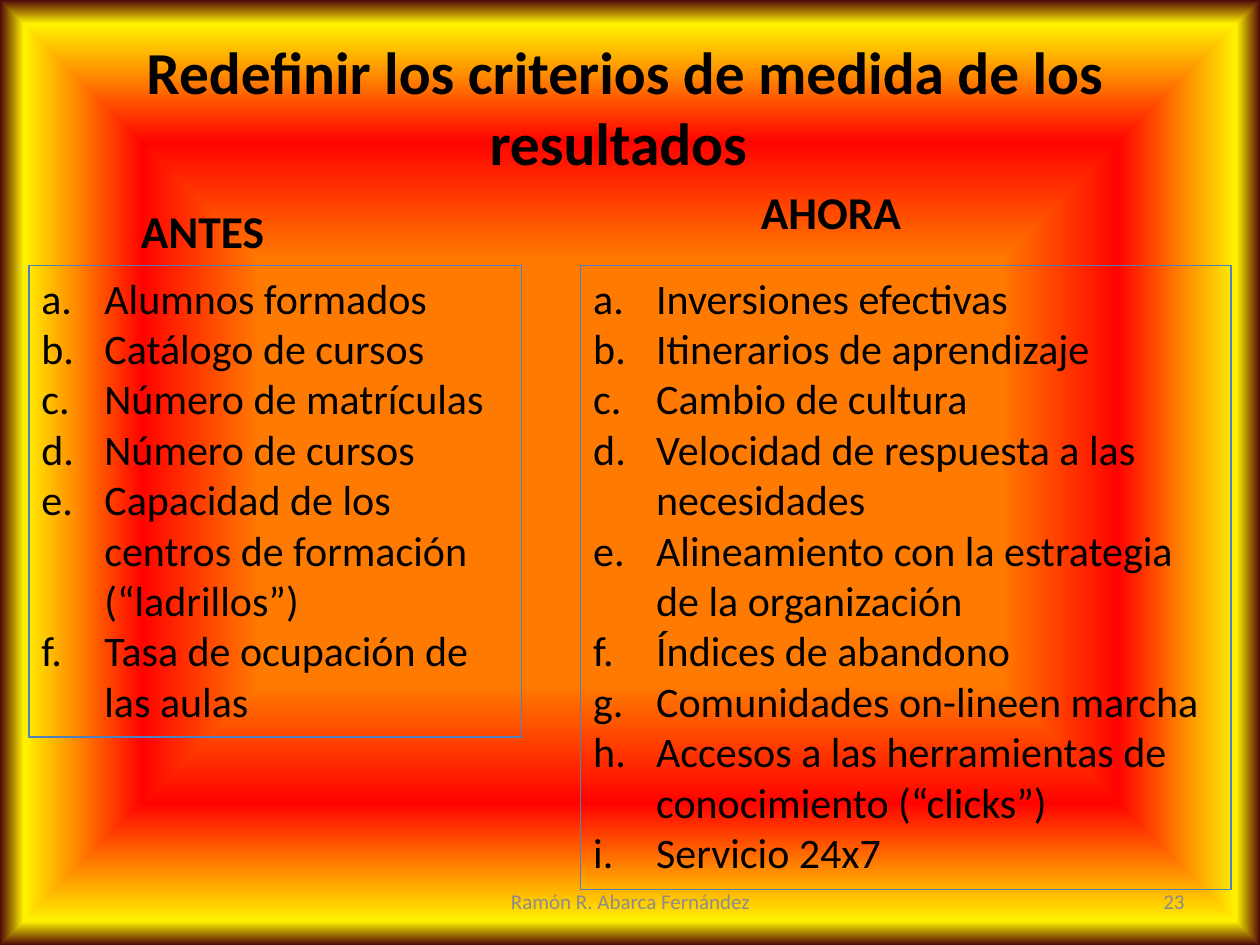
import pptx
import pptx.dml.color
import pptx.enum.shapes
import pptx.enum.text
import pptx.oxml
import pptx.oxml.ns
import pptx.util
from lxml import etree

Inches = pptx.util.Inches
RGBColor = pptx.dml.color.RGBColor
Align = pptx.enum.text.PP_ALIGN
Anchor = pptx.enum.text.MSO_ANCHOR
AutoSize = pptx.enum.text.MSO_AUTO_SIZE
qn = pptx.oxml.ns.qn

BLACK = RGBColor(0x00, 0x00, 0x00)
GRAY = RGBColor(0x8C, 0x8C, 0x8C)
BLUE = RGBColor(0x4F, 0x81, 0xBD)
ORANGE = RGBColor(0xFF, 0x7A, 0x00)
RED = RGBColor(0xFF, 0x03, 0x00)
YELLOW = RGBColor(0xFF, 0xF2, 0x00)
BROWN = RGBColor(0x4D, 0x08, 0x08)

BACKGROUND_STOPS = [(0, ORANGE), (45, ORANGE), (70, RED), (95, YELLOW), (100, BROWN)]
LIST_TOP = 2.11
BEFORE = [
    "Alumnos formados",
    "Catálogo de cursos",
    "Número de matrículas",
    "Número de cursos",
    "Capacidad de los centros de formación (“ladrillos”)",
    "Tasa de ocupación de las aulas",
]
NOW = [
    "Inversiones efectivas",
    "Itinerarios de aprendizaje",
    "Cambio de cultura",
    "Velocidad de respuesta a las necesidades",
    "Alineamiento con la estrategia de la organización",
    "Índices de abandono",
    "Comunidades on-lineen marcha",
    "Accesos a las herramientas de conocimiento (“clicks”)",
    "Servicio 24x7",
]


class SlideBuilder:
    font = "Calibri"

    def __init__(self, slide):
        self.slide = slide

    def background(self, stops):
        fill = self.slide.background.fill
        fill.gradient()
        grad = self.slide.element.find(".//" + qn("a:gradFill"))
        for child in list(grad):
            grad.remove(child)
        gs_list = etree.SubElement(grad, qn("a:gsLst"))
        for position, color in stops:
            gs = etree.SubElement(gs_list, qn("a:gs"), pos=str(position * 1000))
            etree.SubElement(gs, qn("a:srgbClr"), val=str(color))
        shade = etree.SubElement(grad, qn("a:path"), {"path": "rect"})
        center = dict.fromkeys("ltrb", "50000")
        etree.SubElement(shade, qn("a:fillToRect"), center)

    def format(self, p, text, size, color=BLACK, bold=False, align=Align.LEFT):
        p.alignment = align
        r = p.add_run()
        r.text = text
        values = {"name": self.font, "size": pptx.util.Pt(size), "bold": bold}
        for name, value in values.items():
            setattr(r.font, name, value)
        r.font.color.rgb = color

    def text(self, box, text, size, anchor=Anchor.TOP, grow=True, **style):
        sp = self.slide.shapes.add_textbox(*map(Inches, box))
        tf = sp.text_frame
        values = {
            "word_wrap": True,
            "vertical_anchor": anchor,
            "auto_size": AutoSize.SHAPE_TO_FIT_TEXT if grow else AutoSize.NONE,
        }
        for name, value in values.items():
            setattr(tf, name, value)
        self.format(tf.paragraphs[0], text, size, **style)

    def lettered_list(self, box, items):
        rectangle = pptx.enum.shapes.MSO_SHAPE.RECTANGLE
        sp = self.slide.shapes.add_shape(rectangle, *map(Inches, box))
        sp.shadow.inherit = False
        sp.fill.background()
        sp.line.color.rgb = BLUE
        sp.line.width = pptx.util.Pt(0.75)
        tf = sp.text_frame
        values = {
            "word_wrap": True,
            "vertical_anchor": Anchor.TOP,
            "auto_size": AutoSize.SHAPE_TO_FIT_TEXT,
        }
        for name, value in values.items():
            setattr(tf, name, value)
        indent = Inches(0.5)
        for i, item in enumerate(items):
            p = tf.add_paragraph() if i else tf.paragraphs[0]
            props = p._p.get_or_add_pPr()
            props.set("marL", str(indent))
            props.set("indent", str(-indent))
            etree.SubElement(props, qn("a:buFont"), typeface="+mj-lt")
            etree.SubElement(props, qn("a:buAutoNum"), type="alphaLcPeriod")
            self.format(p, item, 24)


def main():
    prs = pptx.Presentation()
    prs.slide_width = Inches(10)
    prs.slide_height = Inches(7.5)
    s = SlideBuilder(prs.slides.add_slide(prs.slide_layouts[6]))
    s.background(BACKGROUND_STOPS)
    title = "Redefinir los criterios de medida de los resultados "
    s.text((0.39, 0.23, 9.14, 1.24), title, 34, bold=True, align=Align.CENTER)
    s.lettered_list((0.23, LIST_TOP, 3.91, 3.74), BEFORE)
    s.text((1.02, 1.56, 1.8, 0.54), "ANTES", 26, bold=True)
    s.lettered_list((4.61, LIST_TOP, 5.16, 4.95), NOW)
    s.text((5.94, 1.41, 2.73, 0.54), "AHORA", 26, bold=True)
    footer = {"size": 12, "color": GRAY, "anchor": Anchor.MIDDLE, "grow": False}
    s.text((7.17, 6.95, 2.33, 0.4), "23", align=Align.RIGHT, **footer)
    author = "Ramón R. Abarca Fernández"
    s.text((3.42, 6.95, 3.17, 0.4), author, align=Align.CENTER, **footer)
    prs.save("out.pptx")


if __name__ == "__main__":
    main()
